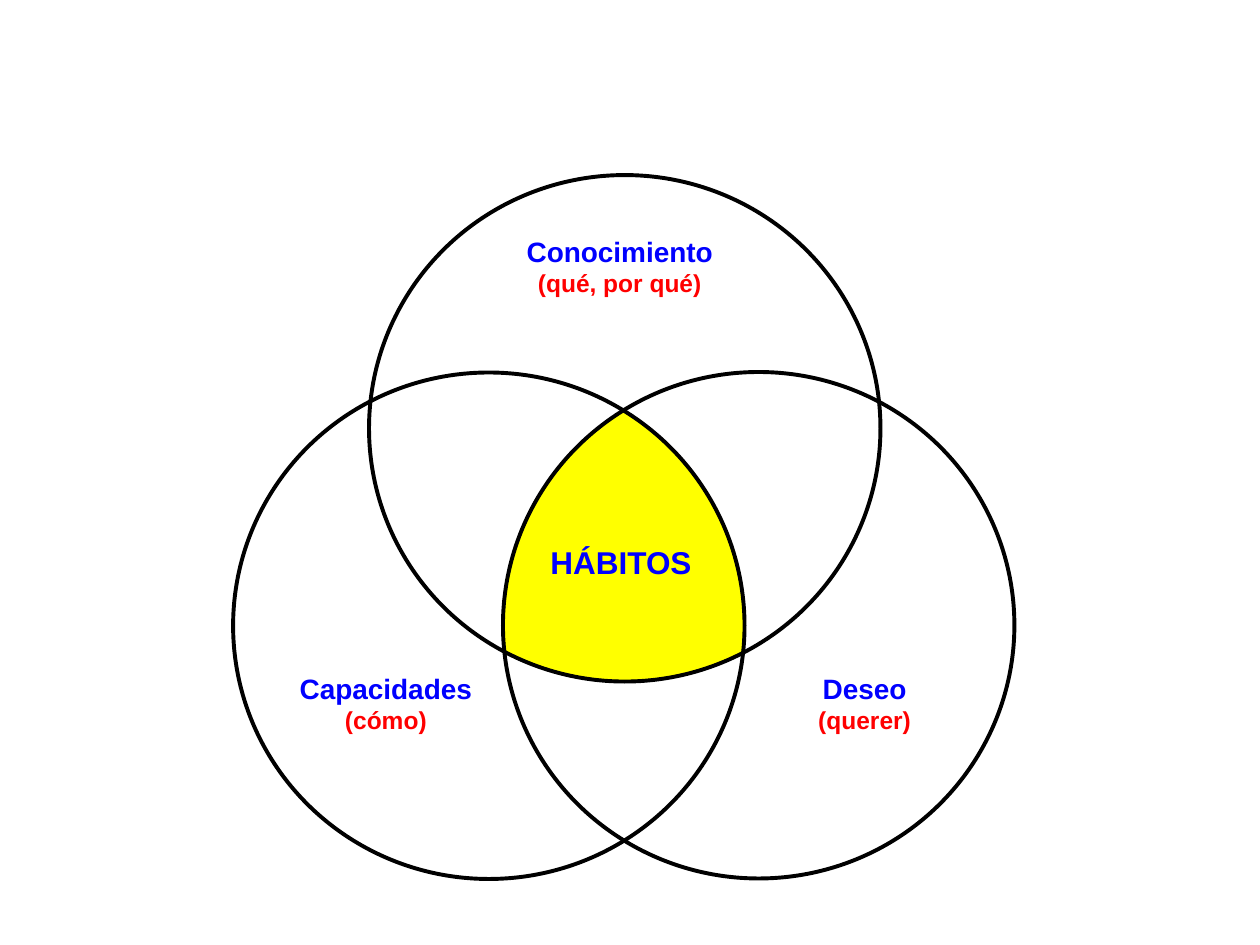
from dataclasses import dataclass
from math import cos, radians, sin

from pptx import Presentation
from pptx.dml.color import RGBColor
from pptx.enum.shapes import MSO_SHAPE
from pptx.enum.text import PP_ALIGN
from pptx.shapes.autoshape import Shape
from pptx.slide import Slide
from pptx.util import Cm, Pt

ELLIPSE = MSO_SHAPE.OVAL
CENTER = PP_ALIGN.CENTER

FONT = "Arial"
BLACK = "000000"
BLUE = "0000FF"
RED = "FF0000"
YELLOW = "FFFF00"
CIRCLE_WIDTH = 10.31
CIRCLE_HEIGHT = 10.21
ARC_STEPS = 16


@dataclass(frozen=True)
class Circle:
    left: float
    top: float
    core_start: float
    core_end: float

    def core_arc(self) -> list[tuple[int, int]]:
        step = (self.core_end - self.core_start) / ARC_STEPS
        angles = [radians(self.core_start + step * i) for i in range(ARC_STEPS + 1)]
        return [
            (
                Cm(self.left + CIRCLE_WIDTH / 2 * (1 + cos(angle))),
                Cm(self.top + CIRCLE_HEIGHT / 2 * (1 + sin(angle))),
            )
            for angle in angles
        ]


@dataclass(frozen=True)
class Line:
    text: str
    size: int
    color: str


@dataclass(frozen=True)
class Label:
    left: float
    top: float
    width: float
    height: float
    lines: tuple[Line, ...]


def concept(left: float, top: float, width: float, name: str, question: str) -> Label:
    return Label(left, top, width, 1.52, (Line(name, 16, BLUE), Line(question, 14, RED)))


KNOWLEDGE = Circle(7.44, 3.53, 62, 118)
DESIRE = Circle(10.14, 7.5, 174, 238)
SKILLS = Circle(4.7, 7.51, -58, 6)

LABELS = (
    concept(10.31, 4.6, 4.37, "Conocimiento", "(qué, por qué)"),
    concept(16.13, 13.41, 2.6, "Deseo", "(querer)"),
    concept(5.61, 13.41, 4.34, "Capacidades", "(cómo)"),
    Label(10.78, 10.82, 3.48, 1.02, (Line("HÁBITOS", 18, BLUE),)),
)


def rgb(color: str) -> RGBColor:
    return RGBColor.from_string(color)


def outline(shape: Shape, width: float) -> None:
    shape.shadow.inherit = False
    shape.line.color.rgb = rgb(BLACK)
    shape.line.width = Pt(width)


def draw_core(slide: Slide, circles: tuple[Circle, ...]) -> None:
    start, *others = [point for circle in circles for point in circle.core_arc()]
    builder = slide.shapes.build_freeform(*start)
    builder.add_line_segments(others, close=True)
    core = builder.convert_to_shape()
    core.fill.solid()
    core.fill.fore_color.rgb = rgb(YELLOW)
    outline(core, 1.5)


def draw_circle(slide: Slide, circle: Circle) -> None:
    ring = slide.shapes.add_shape(
        ELLIPSE, Cm(circle.left), Cm(circle.top), Cm(CIRCLE_WIDTH), Cm(CIRCLE_HEIGHT)
    )
    ring.fill.background()
    outline(ring, 2.25)


def draw_label(slide: Slide, label: Label) -> None:
    box = slide.shapes.add_textbox(
        Cm(label.left), Cm(label.top), Cm(label.width), Cm(label.height)
    )
    frame = box.text_frame
    frame.word_wrap = False
    frame.text = "\n".join(line.text for line in label.lines)
    for paragraph, line in zip(frame.paragraphs, label.lines):
        paragraph.alignment = CENTER
        font = paragraph.runs[0].font
        font.name = FONT
        font.size = Pt(line.size)
        font.bold = True
        font.color.rgb = rgb(line.color)


def main() -> None:
    presentation = Presentation()
    presentation.slide_width = Cm(25.4)
    presentation.slide_height = Cm(19.05)
    slide = presentation.slides.add_slide(presentation.slide_layouts[6])
    draw_core(slide, (SKILLS, KNOWLEDGE, DESIRE))
    for circle in (KNOWLEDGE, DESIRE, SKILLS):
        draw_circle(slide, circle)
    for label in LABELS:
        draw_label(slide, label)
    presentation.save("out.pptx")


if __name__ == "__main__":
    main()
